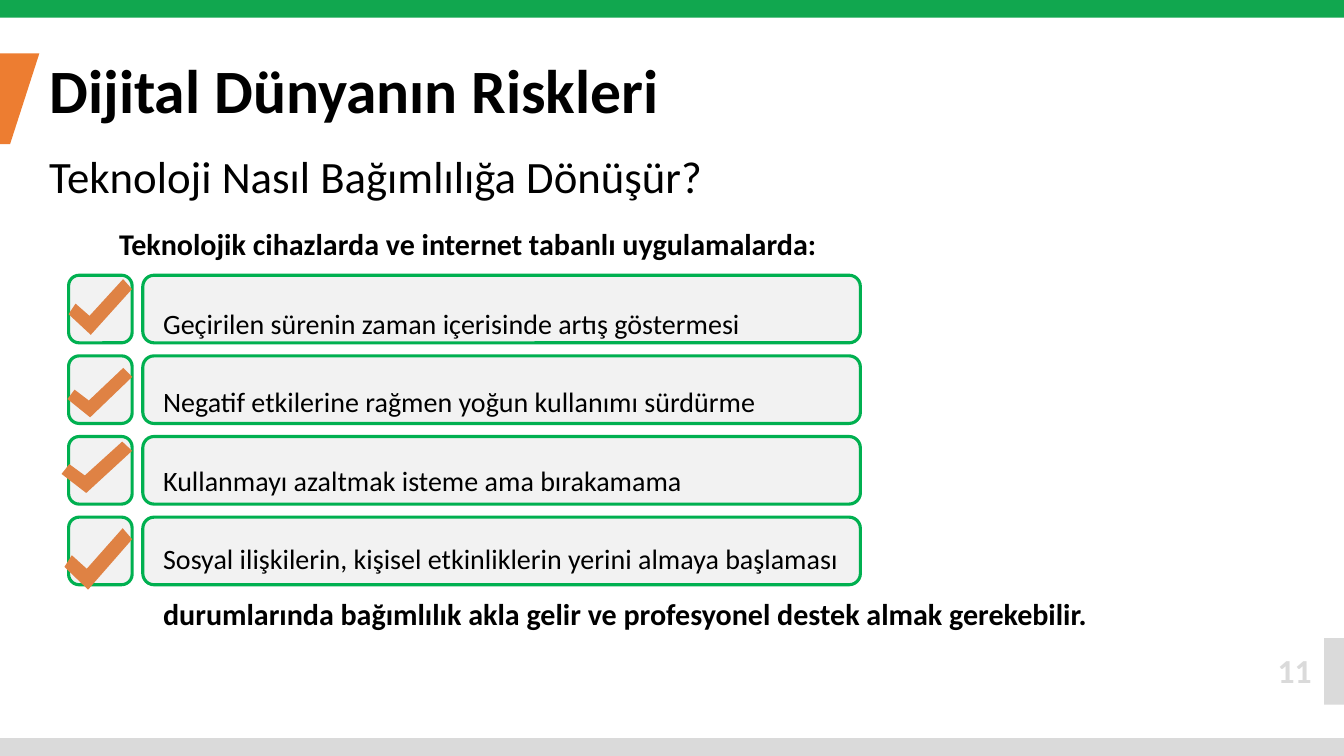
from lxml import etree
from pptx import Presentation
from pptx.dml.color import RGBColor
from pptx.enum.shapes import MSO_SHAPE
from pptx.enum.text import MSO_ANCHOR, MSO_AUTO_SIZE, PP_ALIGN
from pptx.oxml.ns import qn
from pptx.util import Pt

RECTANGLE = MSO_SHAPE.RECTANGLE
ROUNDED = MSO_SHAPE.ROUNDED_RECTANGLE
TOP = MSO_ANCHOR.TOP
FIXED_SIZE = MSO_AUTO_SIZE.NONE
LEFT, RIGHT = PP_ALIGN.LEFT, PP_ALIGN.RIGHT

FONT = "Calibri"
BLACK, GREY, CARD_GREY = "000000", "DADADA", "F2F2F2"
BANNER_GREEN, CARD_GREEN = "11A74F", "00B050"
TAB_ORANGE, CHECK_ORANGE = "ED7D31", "DF8244"

HEADING = "Dijital Dünyanın Riskleri"
QUESTION = "Teknoloji Nasıl Bağımlılığa Dönüşür?"
INTRO = "Teknolojik cihazlarda ve internet tabanlı uygulamalarda:"
SIGNS = [
    "Geçirilen sürenin zaman içerisinde artış göstermesi",
    "Negatif etkilerine rağmen yoğun kullanımı sürdürme",
    "Kullanmayı azaltmak isteme ama bırakamama",
    "Sosyal ilişkilerin, kişisel etkinliklerin yerini almaya başlaması",
]
CONCLUSION = ("durumlarında bağımlılık akla gelir ve profesyonel destek "
              "almak gerekebilir.")

CARD_TOP, CARD_PITCH, CARD_HEIGHT = 196.6, 57.6, 48.3
CHECK_OUTLINE = [(0.86, 0), (0.33, 0.66), (0.11, 0.44), (0, 0.63),
                 (0.35, 1), (1, 0.18)]
CHECK_BOXES = [(49, 199.4, 45.3, 39.8), (48.2, 262.8, 46.3, 35.3),
               (44, 315.4, 50.4, 36.7), (46, 377.3, 48.4, 43.9)]
TAB_OUTLINE = [(7.2, 103), (0, 103), (0, 38.2), (28.1, 38.2)]


def color(hex_code):
    """Turn a hex string into a colour."""
    return RGBColor.from_string(hex_code)


def paint(shape, fill, line=None):
    """Set a flat fill and an optional outline."""
    shape.shadow.inherit = False
    shape.fill.solid()
    shape.fill.fore_color.rgb = color(fill)
    if line:
        shape.line.color.rgb = color(line)
        shape.line.width = Pt(2.25)
    else:
        shape.line.fill.background()


def add_block(slide, kind, left, top, width, height, fill, line=None):
    """Add a painted preset shape."""
    block = slide.shapes.add_shape(kind, Pt(left), Pt(top), Pt(width), Pt(height))
    paint(block, fill, line)


def add_outline(slide, points, fill):
    """Add a painted closed polygon."""
    corners = [(Pt(x), Pt(y)) for x, y in points]
    builder = slide.shapes.build_freeform(*corners[0], scale=1.0)
    builder.add_line_segments(corners[1:], close=True)
    paint(builder.convert_to_shape(), fill)


def place(shape, left, top, width, height, wrap=True):
    """Position a text holder and return its top-anchored frame."""
    shape.left, shape.top = Pt(left), Pt(top)
    shape.width, shape.height = Pt(width), Pt(height)
    frame = shape.text_frame
    frame.auto_size = FIXED_SIZE
    frame.word_wrap = wrap
    frame.vertical_anchor = TOP
    return frame


def write(paragraph, text, size, bold=False, ink=BLACK, align=LEFT,
          indent=0, spacing=1.0, before=0):
    """Fill one unbulleted paragraph with formatted text."""
    properties = paragraph._p.get_or_add_pPr()
    properties.set("marL", str(Pt(indent)))
    properties.set("indent", "0")
    etree.SubElement(properties, qn("a:buNone"))
    paragraph.alignment = align
    paragraph.line_spacing = spacing
    paragraph.space_before = Pt(before)
    run = paragraph.add_run()
    run.text = text
    run.font.name = FONT
    run.font.size = Pt(size)
    run.font.bold = bold
    run.font.color.rgb = color(ink)


def add_label(slide, box, text, wrap=True, **style):
    """Add a one-paragraph text box."""
    label = slide.shapes.add_textbox(0, 0, 0, 0)
    write(place(label, *box, wrap=wrap).paragraphs[0], text, **style)


def add_cards(slide):
    """Draw the rows of check squares and wide cards."""
    for row, (left, top, width, height) in enumerate(CHECK_BOXES):
        card_top = CARD_TOP + row * CARD_PITCH
        for card_left, card_width in ((49, 45.4), (102, 512.6)):
            add_block(slide, ROUNDED, card_left, card_top, card_width,
                      CARD_HEIGHT, CARD_GREY, CARD_GREEN)
        check = [(left + x * width, top + y * height) for x, y in CHECK_OUTLINE]
        add_outline(slide, check, CHECK_ORANGE)


def fill_list(slide, body):
    """Write the list in the body placeholder, in front of the cards."""
    slide.shapes._spTree.append(body._element)
    frame = place(body, 85, 162.8, 862.6, 290.9)
    frame.margin_left = frame.margin_right = frame.margin_bottom = 0
    frame.margin_top = Pt(0.9)
    write(frame.paragraphs[0], INTRO, size=21.5, bold=True, spacing=0.9)
    for sign in SIGNS:
        write(frame.add_paragraph(), sign, size=20, indent=31.5,
              spacing=Pt(50), before=6)
    write(frame.add_paragraph(), CONCLUSION, size=21.5, bold=True,
          indent=31.5, spacing=Pt(34), before=6)


def main():
    """Build and save the slide."""
    deck = Presentation()
    deck.slide_width, deck.slide_height = Pt(960), Pt(540)
    slide = deck.slides.add_slide(deck.slide_layouts[1])
    title, body = slide.placeholders

    add_block(slide, RECTANGLE, 0, 0, 960, 12.6, BANNER_GREEN)
    add_block(slide, RECTANGLE, 0, 527.2, 960, 12.8, GREY)
    add_block(slide, RECTANGLE, 945.8, 455.8, 14.2, 47.5, GREY)
    add_outline(slide, TAB_OUTLINE, TAB_ORANGE)

    heading = place(title, 28.1, 33.8, 748, 60.5)
    write(heading.paragraphs[0], HEADING, size=44, bold=True)
    add_label(slide, (28.1, 103, 527.8, 46), QUESTION, size=32)
    add_cards(slide)
    fill_list(slide, body)
    add_label(slide, (905, 460.8, 39, 36), "11", wrap=False, size=24,
              bold=True, ink=GREY, align=RIGHT)
    deck.save("out.pptx")


if __name__ == "__main__":
    main()
